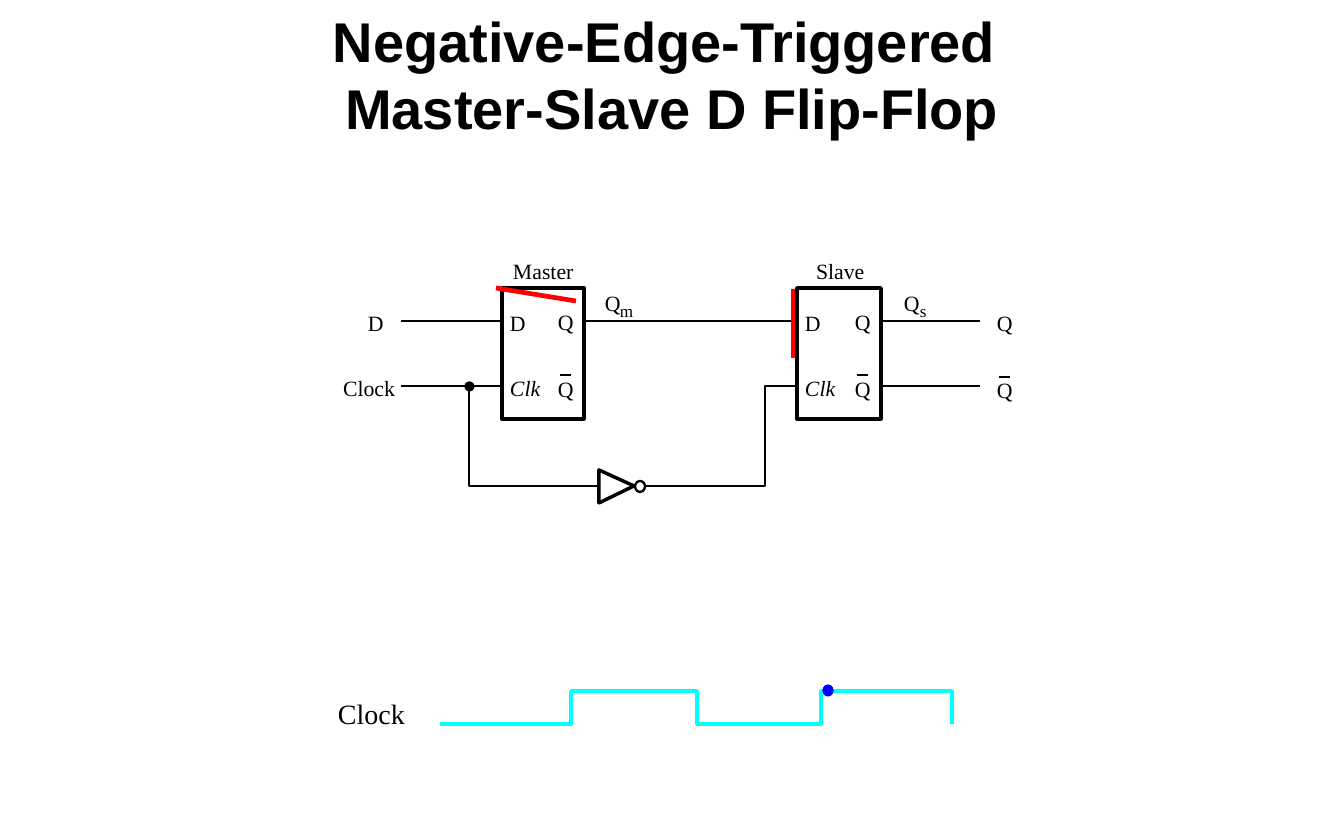
from dataclasses import dataclass

from lxml.etree import SubElement
from pptx import Presentation
from pptx.dml.color import RGBColor
from pptx.enum.shapes import MSO_CONNECTOR, MSO_SHAPE
from pptx.enum.text import MSO_ANCHOR, MSO_AUTO_SIZE, PP_ALIGN
from pptx.oxml.ns import qn
from pptx.util import Inches, Pt

UNIT = Inches(1) / 112  # EMU in one px


@dataclass(frozen=True)
class Theme:
    black: str = "000000"
    white: str = "FFFFFF"
    red: str = "FF0000"
    blue: str = "0000FF"
    cyan: str = "00FFFF"
    sans: str = "Arial"
    serif: str = "Times New Roman"
    head: int = 36
    large: int = 18
    base: int = 14
    small: int = 11


@dataclass(frozen=True)
class Wire:
    x1: int
    y1: int
    x2: int
    y2: int
    weight: float = 1.5
    color: str = Theme.black


@dataclass(frozen=True)
class Label:
    text: str
    x: int
    y: int
    w: int = 21
    h: int = 27
    size: int = Theme.base
    italic: bool = False
    inset: bool = False


@dataclass(frozen=True)
class Latch:
    name: str
    x: int
    w: int
    name_x: int
    name_w: int


def px(n: float) -> int:
    return round(n * UNIT)


def rgb(color: str) -> RGBColor:
    return RGBColor.from_string(color)


def write(frame, text: str, *, size: int, font: str = Theme.serif,
          color: str = Theme.black, bold: bool = False, italic: bool = False,
          align=PP_ALIGN.LEFT) -> None:
    for i, line in enumerate(text.split("\n")):
        para = frame.paragraphs[0] if i == 0 else frame.add_paragraph()
        para.alignment = align
        run = para.add_run()
        run.text = line
        run.font.name, run.font.size = font, Pt(size)
        run.font.bold, run.font.italic = bold, italic
        run.font.color.rgb = rgb(color)


def paint(shape, weight: float, line: str = Theme.black, fill: str = "") -> None:
    shape.shadow.inherit = False
    shape.line.color.rgb = rgb(line)
    shape.line.width = Pt(weight)
    if fill:
        shape.fill.solid()
        shape.fill.fore_color.rgb = rgb(fill)
    else:
        shape.fill.background()


def draw_wire(slide, wire: Wire) -> None:
    line = slide.shapes.add_connector(
        MSO_CONNECTOR.STRAIGHT, px(wire.x1), px(wire.y1), px(wire.x2), px(wire.y2))
    line.line.color.rgb = rgb(wire.color)
    line.line.width = Pt(wire.weight)
    SubElement(line._element.spPr, qn("a:effectLst"))


def draw_trace(slide, points: list[tuple[int, int]], weight: float,
               line: str = Theme.black, fill: str = "") -> None:
    pen = slide.shapes.build_freeform(*points[0], scale=UNIT)
    pen.add_line_segments(points[1:], close=bool(fill))
    paint(pen.convert_to_shape(), weight, line, fill)


def draw_shape(slide, kind, x: int, y: int, w: int, h: int, weight: float,
               line: str, fill: str) -> None:
    shape = slide.shapes.add_shape(kind, px(x), px(y), px(w), px(h))
    paint(shape, weight, line, fill)


def draw_label(slide, label: Label) -> None:
    box = slide.shapes.add_textbox(px(label.x), px(label.y), px(label.w), px(label.h))
    frame = box.text_frame
    frame.word_wrap = False
    frame.auto_size = MSO_AUTO_SIZE.SHAPE_TO_FIT_TEXT
    if not label.inset:
        frame.margin_left = frame.margin_right = 0
        frame.margin_top = frame.margin_bottom = 0
    write(frame, label.text, size=label.size, italic=label.italic)


def draw_bar_q(slide, x: int, y: int, bar_y: int) -> None:
    draw_label(slide, Label("Q", x, y))
    draw_wire(slide, Wire(x + 2, bar_y, x + 13, bar_y, 1.38))


def draw_latch(slide, latch: Latch) -> None:
    draw_shape(slide, MSO_SHAPE.RECTANGLE, latch.x, 288, latch.w, 131,
               2.25, Theme.black, Theme.white)
    left, right = latch.x + 8, latch.x + latch.w - 26
    for label in (Label(latch.name, latch.name_x, 258, latch.name_w),
                  Label("D", left, 310), Label("Q", right, 309),
                  Label("Clk", left, 375, 37, italic=True)):
        draw_label(slide, label)
    draw_bar_q(slide, right, 376, 375)


def main() -> None:
    deck = Presentation()
    deck.slide_width, deck.slide_height = px(1344), px(840)
    slide = deck.slides.add_slide(deck.slide_layouts[5])
    top, mid, low = 321, 386, 486  # heights of the wires

    # Title
    title = slide.shapes.title
    title.left, title.top, title.width, title.height = px(112), 0, px(1120), px(148)
    title.text_frame.auto_size = MSO_AUTO_SIZE.NONE
    title.text_frame.vertical_anchor = MSO_ANCHOR.MIDDLE
    write(title.text_frame, "Negative-Edge-Triggered \nMaster-Slave D Flip-Flop",
          size=Theme.head, font=Theme.sans, bold=True, align=PP_ALIGN.CENTER)

    # Clock wave with its marker
    high, base = 691, 724
    draw_trace(slide, [(952, base), (952, high), (821, high), (821, base), (697, base),
                       (697, high), (571, high), (571, base), (440, base)],
               2.25, Theme.cyan)
    draw_label(slide, Label("Clock", 327, 691, 91, 45, Theme.large, inset=True))
    draw_shape(slide, MSO_SHAPE.OVAL, 823, 685, 10, 11, 0.75, Theme.blue, Theme.blue)

    # Wires
    draw_trace(slide, [(797, mid), (765, mid), (765, low), (667, low)], 1.5)
    draw_trace(slide, [(401, mid), (469, mid), (469, low), (567, low)], 1.5)
    for wire in (Wire(502, mid, 469, mid, 1.38), Wire(401, top, 502, top),
                 Wire(797, top, 584, top), Wire(980, top, 881, top),
                 Wire(980, mid, 881, mid), Wire(667, low, 642, low),
                 Wire(567, low, 599, low)):
        draw_wire(slide, wire)
    draw_shape(slide, MSO_SHAPE.OVAL, 465, 382, 9, 9, 0.75, Theme.black, Theme.black)

    # Inverter
    draw_trace(slide, [(634, low), (599, 503), (599, 470)], 2.25, fill=Theme.white)
    draw_shape(slide, MSO_SHAPE.OVAL, 635, 481, 10, 11, 1.5, Theme.black, Theme.white)

    # Latches
    for latch in (Latch("Master", 502, 82, 513, 62), Latch("Slave", 797, 84, 816, 55)):
        draw_latch(slide, latch)

    # Signal names
    for label in (Label("D", 368, 310), Label("Clock", 343, 375, 58), Label("Q", 997, 310),
                  Label("Q", 605, 290), Label("m", 620, 300, 18, 21, Theme.small),
                  Label("Q", 904, 290), Label("s", 920, 300, 11, 21, Theme.small)):
        draw_label(slide, label)
    draw_bar_q(slide, 997, 377, 377)

    # Red switches
    draw_wire(slide, Wire(496, 288, 576, 301, 3, Theme.red))
    draw_wire(slide, Wire(793, 289, 793, 358, 3, Theme.red))

    deck.save("out.pptx")


if __name__ == "__main__":
    main()
